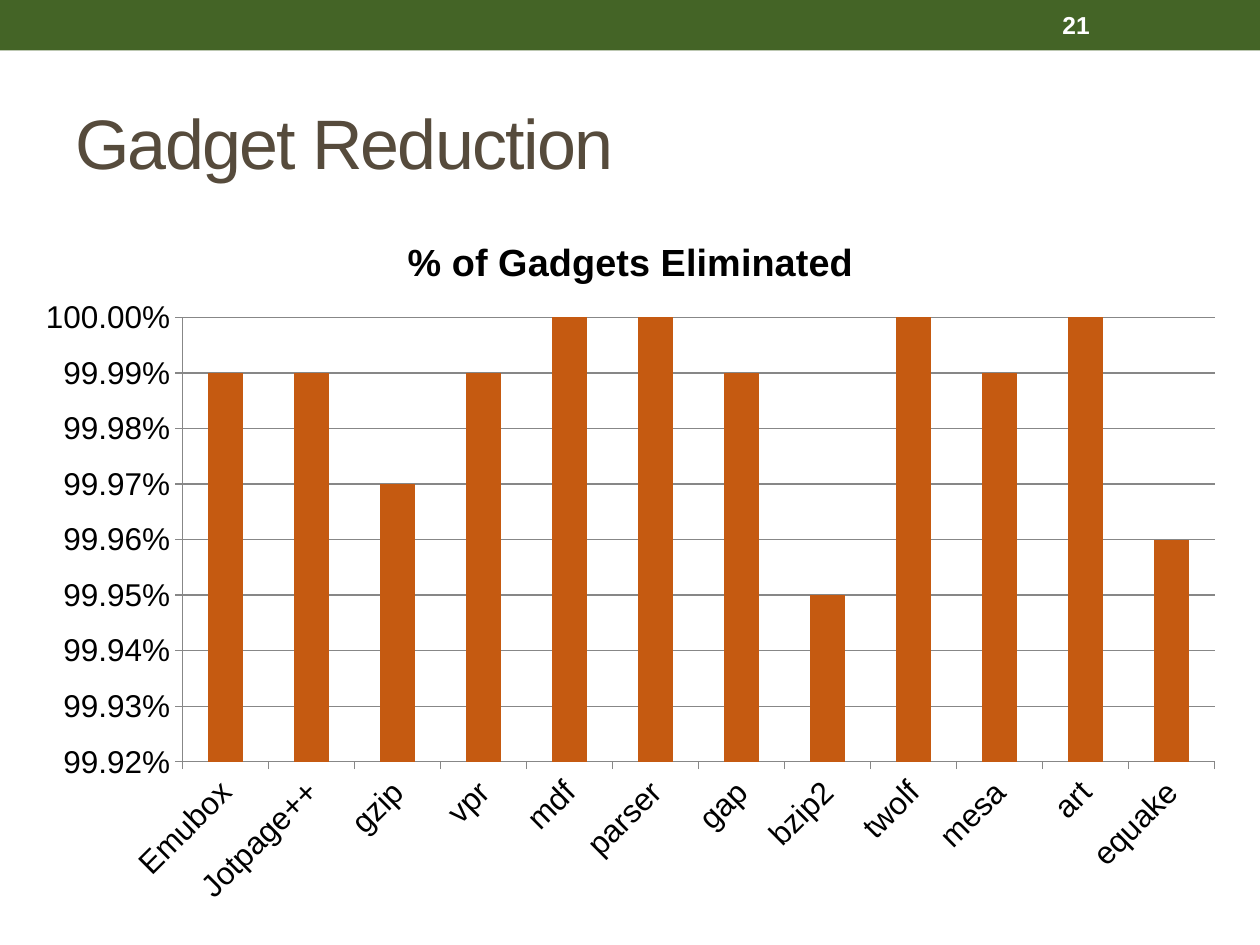
import lxml.etree
import pptx
import pptx.chart.data
import pptx.dml.color
import pptx.enum.chart
import pptx.enum.shapes
import pptx.enum.text
import pptx.oxml.ns
import pptx.util

Pt = pptx.util.Pt
RGB = pptx.dml.color.RGBColor.from_string
qn = pptx.oxml.ns.qn

THEME = {
    "font": "Arial",
    "band": RGB("446426"), "title": RGB("564B3C"), "white": RGB("FFFFFF"),
    "text": RGB("000000"), "bar": RGB("C55A11"), "line": RGB("878787"),
    "title_size": Pt(40), "number_size": Pt(14),
    "chart_title_size": Pt(21.6), "label_size": Pt(18),
}


def set_font(font, size, color, bold=False):
    fmt = {"name": THEME["font"], "size": THEME[size], "bold": bold}
    for key, value in fmt.items():
        setattr(font, key, value)
    font.color.rgb = THEME[color]


def add_text(s, text, box, size, color, bold=False):
    tf = s.shapes.add_textbox(*map(Pt, box)).text_frame
    fmt = {"word_wrap": True, "vertical_anchor": pptx.enum.text.MSO_ANCHOR.MIDDLE}
    for key, value in fmt.items():
        setattr(tf, key, value)
    r = tf.paragraphs[0].add_run()
    r.text = text
    set_font(r.font, size, color, bold)
    return r


prs = pptx.Presentation()
prs.slide_width, prs.slide_height = Pt(720), Pt(540)
s = prs.slides.add_slide(prs.slide_layouts[6])

# Top band with the slide number
sp = s.shapes.add_shape(pptx.enum.shapes.MSO_SHAPE.RECTANGLE, 0, 0, Pt(720), Pt(28.8))
sp.shadow.inherit = False
sp.fill.solid()
sp.fill.fore_color.rgb = THEME["band"]
sp.line.fill.background()
add_text(s, "21", (600, 1.44, 84, 25.92), "number_size", "white", bold=True)

# Title, slightly tightened
r = add_text(s, "Gadget Reduction", (36, 41.76, 648, 77.76), "title_size", "title")
r.font._element.set("spc", "-100")

# Column chart
eliminated = {
    "Emubox": 0.9999, "Jotpage++": 0.9999, "gzip": 0.9997, "vpr": 0.9999,
    "mdf": 1, "parser": 1, "gap": 0.9999, "bzip2": 0.9995,
    "twolf": 1, "mesa": 0.9999, "art": 1, "equake": 0.9996,
}
data = pptx.chart.data.CategoryChartData(number_format="0.00%")
data.categories = list(eliminated)
data.add_series("Series 1", list(eliminated.values()))
# The frame's top and height fix the plot area in points
left, top, width, height = 12.24, 120.24, 696.24, 408.24
chart = s.shapes.add_chart(
    pptx.enum.chart.XL_CHART_TYPE.COLUMN_CLUSTERED,
    Pt(left), Pt(top), Pt(width), Pt(height), data).chart
chart.has_legend = False
set_font(chart.font, "label_size", "text")

chart.has_title = True
tf = chart.chart_title.text_frame
tf.text = "% of Gadgets Eliminated"
set_font(tf.paragraphs[0].runs[0].font, "chart_title_size", "text", bold=True)
chart.chart_title.include_in_layout = False

plot = chart.plots[0]
plot.gap_width = 150
plot.vary_by_categories = False
fill = plot.series[0].format.fill
fill.solid()
fill.fore_color.rgb = THEME["bar"]

# Axes
cat, val = chart.category_axis, chart.value_axis
axis_format = {"minimum_scale": 0.9992, "maximum_scale": 1,
               "major_unit": 0.0001, "has_major_gridlines": True}
for key, value in axis_format.items():
    setattr(val, key, value)
val.tick_labels.number_format = "0.00%"
val.tick_labels.number_format_is_linked = False
for axis in (cat, val):
    axis.major_tick_mark = pptx.enum.chart.XL_TICK_MARK.OUTSIDE
    set_font(axis.tick_labels.font, "label_size", "text")
for part in (cat, val, val.major_gridlines):
    part.format.line.color.rgb = THEME["line"]
    part.format.line.width = Pt(0.75)
cat._element.txPr.bodyPr.set("rot", "-2700000")  # labels slant by 45 degrees

# Fixed plot area inside the chart frame
area = chart._chartSpace.chart.plotArea
for old in area.findall(qn("c:layout")):
    area.remove(old)
layout = lxml.etree.Element(qn("c:layout"))
area.insert(0, layout)
manual = lxml.etree.SubElement(layout, qn("c:manualLayout"))
plot_layout = {
    "layoutTarget": "inner", "xMode": "edge", "yMode": "edge",
    "x": (104.3 - left) / width, "y": (181.4 - top) / height,
    "w": 589.8 / width, "h": 254 / height,
}
for tag, value in plot_layout.items():
    lxml.etree.SubElement(manual, qn("c:" + tag)).set("val", str(value))

prs.save("out.pptx")
